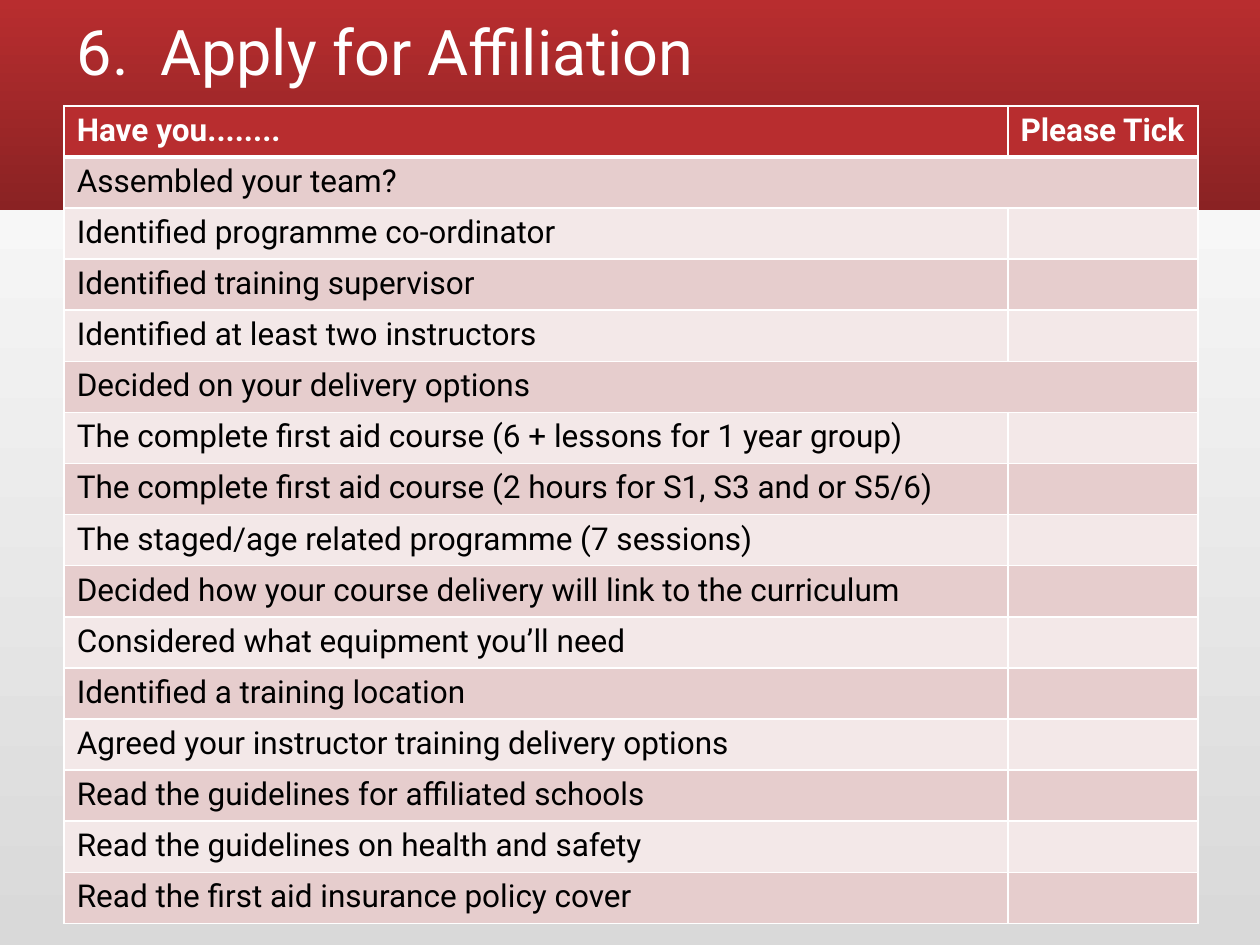
from lxml import etree
from pptx import Presentation
from pptx.dml.color import RGBColor
from pptx.enum.shapes import MSO_SHAPE
from pptx.enum.text import MSO_ANCHOR, PP_ALIGN
from pptx.oxml.ns import qn
from pptx.util import Inches, Pt

RECTANGLE = MSO_SHAPE.RECTANGLE
MIDDLE = MSO_ANCHOR.MIDDLE
LEFT = PP_ALIGN.LEFT
TITLE_ONLY = 5
FONT = "Roboto"
COLORS = {
    "red": "B82D2F",
    "dark red": "8A2223",
    "rose": "E6CDCD",
    "pale rose": "F3E8E8",
    "gray": "D9D9D9",
    "white": "FFFFFF",
    "black": "000000",
}
HEADINGS = ("Have you........", "Please Tick")
CHECKLIST = (
    "Assembled your team?",
    "Identified programme co-ordinator",
    "Identified training supervisor",
    "Identified at least two instructors",
    "Decided on your delivery options",
    "The complete first aid course (6 + lessons for 1 year group)",
    "The complete first aid course (2 hours for S1, S3 and or S5/6)",
    "The staged/age related programme (7 sessions)",
    "Decided how your course delivery will link to the curriculum",
    "Considered what equipment you’ll need",
    "Identified a training location",
    "Agreed your instructor training delivery options",
    "Read the guidelines for affiliated schools",
    "Read the guidelines on health and safety",
    "Read the first aid insurance policy cover",
)
SECTION_ROWS = (1, 5)
COLUMN_WIDTHS = (7.49, 1.51)
TABLE_HEIGHT = 6.49


def color(name):
    return RGBColor.from_string(COLORS[name])


def fill_gradient(fill, first, last, angle):
    """The angle runs counter-clockwise, in degrees."""
    fill.gradient()
    fill.gradient_angle = angle
    for stop, name in zip(fill.gradient_stops, (first, last)):
        stop.color.rgb = color(name)


def format_font(font, size, name, bold=False):
    font.name = FONT
    font.size = Pt(size)
    font.bold = bold
    font.color.rgb = color(name)


def add_header_band(page, width):
    band = page.shapes.add_shape(RECTANGLE, 0, 0, width, Inches(1.67))
    band.shadow.inherit = False
    band.line.fill.background()
    fill_gradient(band.fill, "red", "dark red", 270)
    page.shapes._spTree.insert(2, band._element)  # behind the title


def set_title(page, text):
    title = page.shapes.title
    title.left, title.top = Inches(0.51), Inches(-0.19)
    title.width, title.height = Inches(9), Inches(1.25)
    frame = title.text_frame
    frame.text = text
    frame.vertical_anchor = MIDDLE
    para = frame.paragraphs[0]
    para.alignment = LEFT
    para.line_spacing = 0.9
    format_font(para.runs[0].font, 36, "white")


def set_borders(cell, top, bottom):
    """Draw white borders; top and bottom are widths in points."""
    properties = cell._tc.get_or_add_tcPr()
    for tag, width in (("a:lnL", 1), ("a:lnR", 1), ("a:lnT", top), ("a:lnB", bottom)):
        line = etree.SubElement(properties, qn(tag), w=str(Pt(width)))
        fill = etree.SubElement(line, qn("a:solidFill"))
        etree.SubElement(fill, qn("a:srgbClr"), val=COLORS["white"])


def format_cell(cell, row):
    header = row == 0
    set_borders(cell, 3 if row == 1 else 1, 3 if header else 1)
    cell.fill.solid()
    cell.fill.fore_color.rgb = color(
        "red" if header else "rose" if row % 2 else "pale rose")
    para = cell.text_frame.paragraphs[0]
    format_font(para.font, 18, "black")
    for span in para.runs:
        format_font(span.font, 18, "white" if header else "black", header)


def add_checklist(page):
    rows = [HEADINGS] + [(item, "") for item in CHECKLIST]
    table = page.shapes.add_table(
        len(rows), len(COLUMN_WIDTHS), Inches(0.51), Inches(0.84),
        Inches(sum(COLUMN_WIDTHS)), Inches(TABLE_HEIGHT)).table
    for column, width in zip(table.columns, COLUMN_WIDTHS):
        column.width = Inches(width)
    for row, texts in enumerate(rows):
        table.rows[row].height = Inches(TABLE_HEIGHT / len(rows))
        for column, text in enumerate(texts):
            cell = table.cell(row, column)
            cell.text = text
            format_cell(cell, row)
    for row in SECTION_ROWS:
        table.cell(row, 0).merge(table.cell(row, 1))


def main():
    deck = Presentation()
    deck.slide_width, deck.slide_height = Inches(10), Inches(7.5)
    page = deck.slides.add_slide(deck.slide_layouts[TITLE_ONLY])
    fill_gradient(page.background.fill, "gray", "white", 90)
    add_header_band(page, deck.slide_width)
    set_title(page, "6.  Apply for Affiliation")
    add_checklist(page)
    deck.save("out.pptx")


if __name__ == "__main__":
    main()
